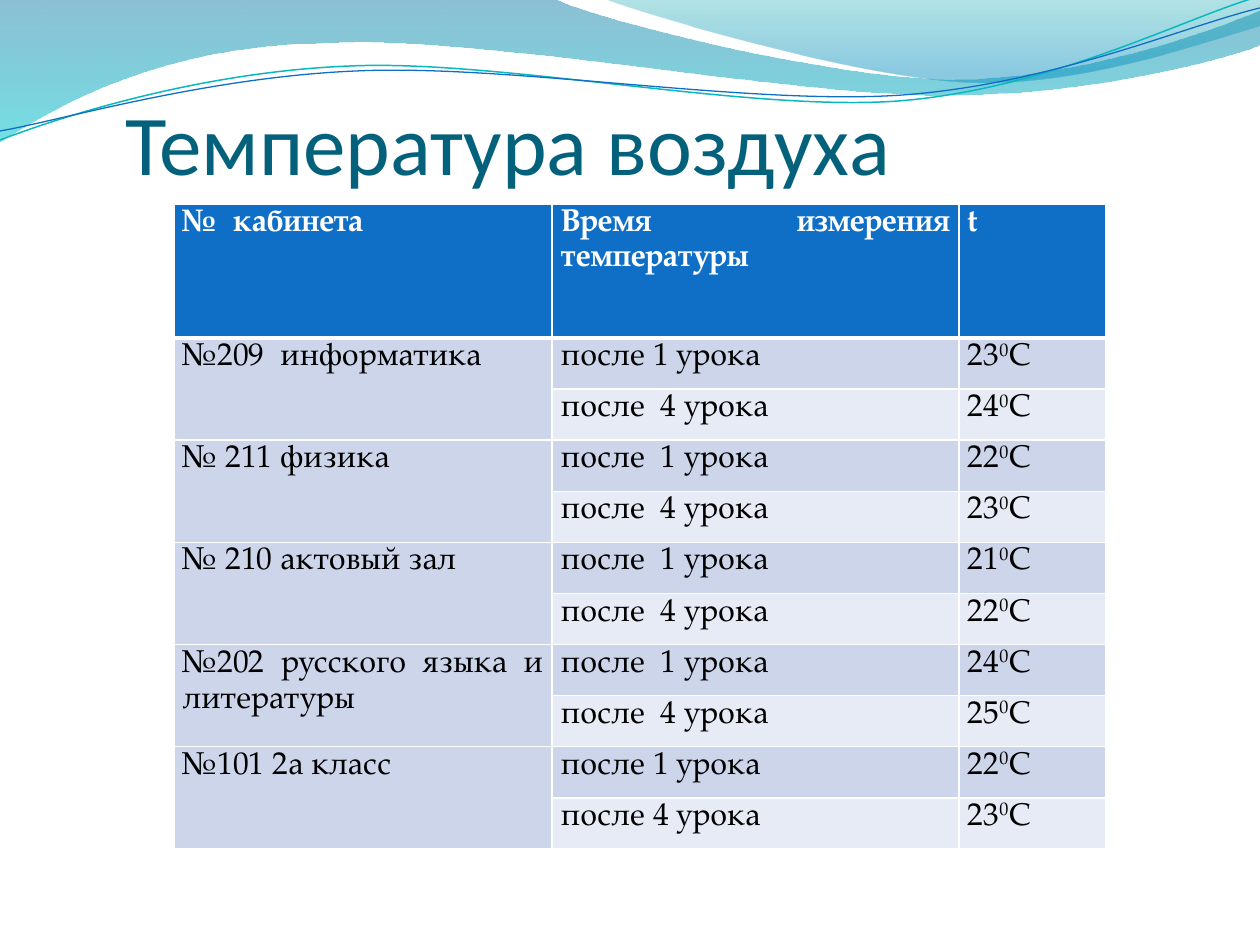
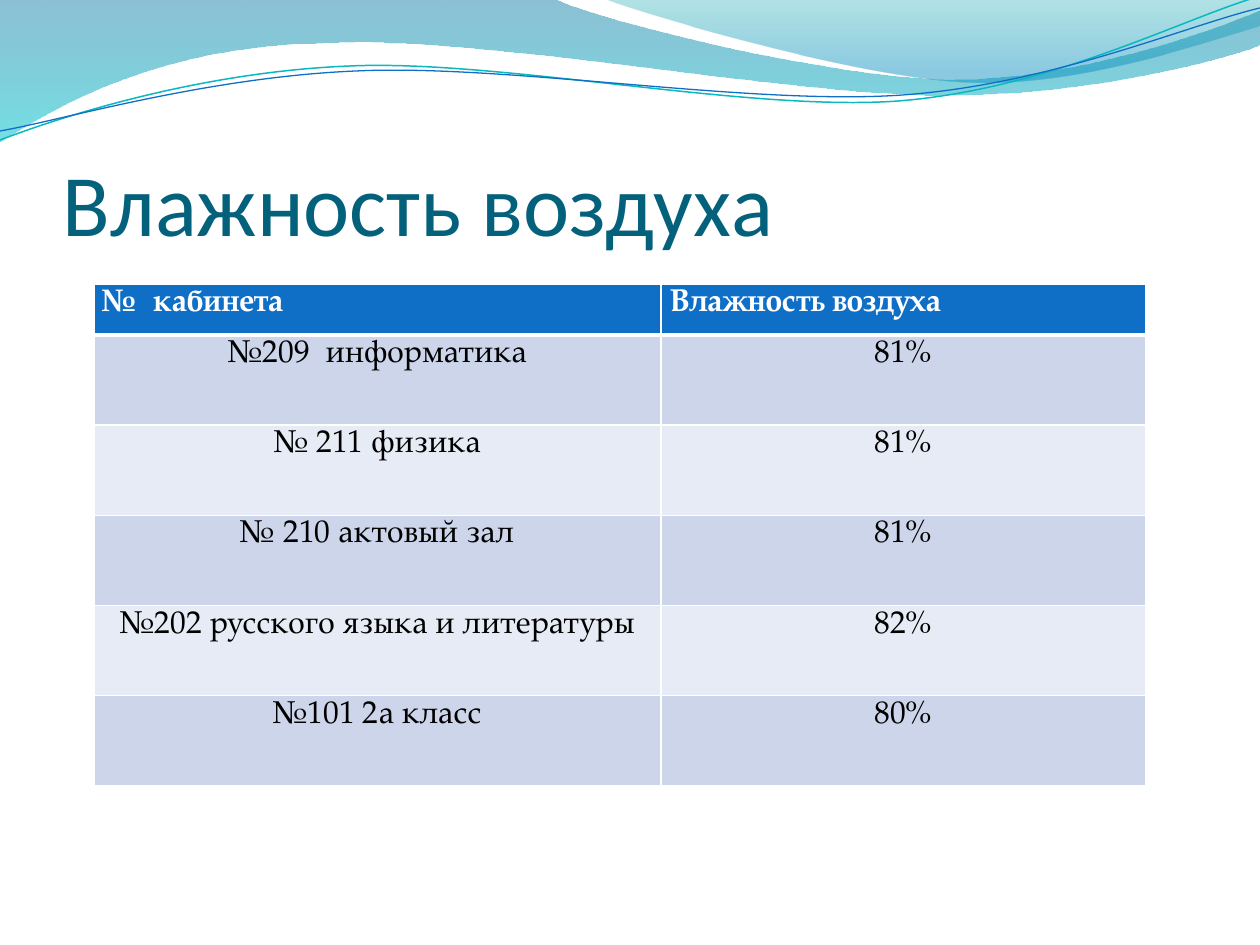
import pptx
import pptx.util
import pptx.dml.color
import pptx.enum.text
import pptx.oxml
import pptx.oxml.ns

PX = 914400 / 126
COLORS = {
    "title": "04617B", "header": "0F6FC6", "white": "FFFFFF", "text": "000000",
    "dark_row": "CCD5EA", "light_row": "E7EBF5",
    "teal_line": "0AB8BF", "blue_line": "0F6FC6",
    "wave_top": "0074A1", "wave_bottom": "00C6CF",
    "crest_top": "00A1A9", "crest_bottom": "008BBF",
}
TITLE_FONT = "Calibri"
TABLE_FONT = "TeX Gyre Pagella"
ALIGN = pptx.enum.text.PP_ALIGN

BANDS = [
    {"start": (0, 0),
     "segments": [(554, -1), (600, 21, 837, 79, 955, 79), (1075, 79, 1207, 33, 1260, 11),
                  (1261, 45), (1238, 55, 1096, 96, 940, 95), (782, 95, 481, 35, 324, 43),
                  (163, 45, 58, 105, -1, 142), (0, 0)],
     "stops": [(0, "wave_top", 45), (1, "wave_bottom", 55)]},
    {"start": (604, -1),
     "segments": [(641, 14, 859, 78, 969, 82), (1079, 87, 1211, 40, 1260, 26),
                  (1260, 0), (604, -1)],
     "stops": [(0, "crest_top", 30), (0.8, "crest_bottom", 45)]},
]
LINES = [
    {"start": (0, 140), "color": "teal_line", "width": 0.85,
     "segments": [(60, 117, 199, 72, 349, 66), (498, 59, 747, 112, 898, 101),
                  (1050, 89, 1182, 19, 1257, -3)]},
    {"start": (0, 131), "color": "blue_line", "width": 0.75,
     "segments": [(59, 121, 207, 77, 357, 71), (508, 64, 752, 106, 903, 95),
                  (1053, 84, 1185, 26, 1260, 8)]},
]

TEMPERATURES = [
    ("№209  информатика", [("после 1 урока", 23), ("после  4 урока", 24)]),
    ("№ 211 физика ", [("после  1 урока", 22), ("после  4 урока", 23)]),
    ("№ 210 актовый зал", [("после  1 урока", 21), ("после  4 урока", 22)]),
    ("№202 русского языка и литературы ", [("после  1 урока", 24), ("после  4 урока", 25)]),
    ("№101 2а класс", [("после 1 урока", 22), ("после 4 урока", 23)]),
]
HUMIDITY = [
    ("№209  информатика", "81%"),
    ("№ 211 физика", "81%"),
    ("№ 210 актовый зал", "81%"),
    ("№202 русского языка и литературы", "82%"),
    ("№101 2а класс", "80%"),
]
SLIDES = [
    {"title": "Температура воздуха", "title_box": (126, 155, 1134, 38), "title_size": 48.6,
     "header": ["№  кабинета", "Время измерения температуры", "t "],
     "rows": [(room if index == 0 else None, time, [str(degrees), ("0", 30), "С"])
              for room, readings in TEMPERATURES
              for index, (time, degrees) in enumerate(readings)],
     "origin": (174, 204), "columns": [378, 407, 147],
     "height": 645, "header_height": 134, "align": ALIGN.JUSTIFY},
    {"title": "Влажность воздуха", "title_box": (63, 97, 1134, 157), "title_size": 50,
     "header": ["№  кабинета", "Влажность воздуха"],
     "rows": HUMIDITY,
     "origin": (94, 284), "columns": [567, 485],
     "height": 502, "header_height": 51, "align": ALIGN.CENTER},
]


def px(value):
    return pptx.util.Emu(round(value * PX))


def rgb(name):
    return pptx.dml.color.RGBColor.from_string(COLORS[name])


def add_outline(slide, start, segments):
    points = [pair for segment in segments for pair in zip(segment[::2], segment[1::2])]
    builder = slide.shapes.build_freeform(*start, scale=PX)
    builder.add_line_segments(points, close=points[-1] == start)
    shape = builder.convert_to_shape()
    shape.shadow.inherit = False
    steps = iter(list(shape.element.iter(pptx.oxml.ns.qn("a:lnTo"))))
    for segment in segments:
        first = next(steps)
        if len(segment) == 2:
            continue
        first.tag = pptx.oxml.ns.qn("a:cubicBezTo")
        for extra in (next(steps), next(steps)):
            first.append(extra[0])
            extra.getparent().remove(extra)
    return shape


def add_waves(slide):
    for band in BANDS:
        shape = add_outline(slide, band["start"], band["segments"])
        shape.line.fill.background()
        shape.fill.gradient()
        shape.fill.gradient_angle = 270
        for stop, (position, color, opacity) in zip(shape.fill.gradient_stops, band["stops"]):
            stop.position = position
            stop.color.rgb = rgb(color)
        color_elements = shape.element.spPr.iter(pptx.oxml.ns.qn("a:srgbClr"))
        for element, (position, color, opacity) in zip(list(color_elements), band["stops"]):
            element.append(pptx.oxml.parse_xml(
                f'<a:alpha {pptx.oxml.ns.nsdecls("a")} val="{opacity * 1000}"/>'))
    for line in LINES:
        shape = add_outline(slide, line["start"], line["segments"])
        shape.fill.background()
        shape.line.color.rgb = rgb(line["color"])
        shape.line.width = pptx.util.Pt(line["width"])


def add_run(paragraph, text, font, size, color, bold=False, baseline=0):
    run = paragraph.add_run()
    run.text = text
    run.font.name = font
    run.font.size = pptx.util.Pt(size)
    run.font.bold = bold
    run.font.color.rgb = rgb(color)
    if baseline:
        run.font._element.set("baseline", str(baseline * 1000))


def add_title(slide, text, box, size):
    frame = slide.shapes.add_textbox(*map(px, box)).text_frame
    frame.word_wrap = True
    frame.vertical_anchor = pptx.enum.text.MSO_ANCHOR.BOTTOM
    frame.margin_left = frame.margin_right = frame.margin_bottom = 0
    frame.margin_top = px(6)
    add_run(frame.paragraphs[0], text, TITLE_FONT, size, "title")


def set_borders(cell, row):
    widths = {"L": 1, "R": 1, "T": 3 if row == 1 else 1, "B": 3 if row == 0 else 1}
    properties = cell._tc.get_or_add_tcPr()
    for side, width in widths.items():
        properties.append(pptx.oxml.parse_xml(
            f'<a:ln{side} {pptx.oxml.ns.nsdecls("a")} w="{width * 12700}"><a:solidFill>'
            f'<a:srgbClr val="{COLORS["white"]}"/></a:solidFill></a:ln{side}>'))


def fill_cell(cell, content, row, align):
    is_header = row == 0
    set_borders(cell, row)
    cell.fill.solid()
    cell.fill.fore_color.rgb = rgb(
        "header" if is_header else "dark_row" if row % 2 else "light_row")
    cell.margin_left = cell.margin_right = px(9)
    cell.margin_top = cell.margin_bottom = 0
    if content is None:
        return
    paragraph = cell.text_frame.paragraphs[0]
    paragraph.alignment = ALIGN.JUSTIFY if is_header else align
    paragraph.line_spacing = 1.15
    paragraph.space_after = pptx.util.Pt(10)
    for part in content if isinstance(content, list) else [content]:
        text, baseline = part if isinstance(part, tuple) else (part, 0)
        add_run(paragraph, text, TABLE_FONT, 18, "white" if is_header else "text",
                is_header, baseline)


def add_data_table(slide, data):
    rows = [data["header"], *data["rows"]]
    row_height = (data["height"] - data["header_height"]) / len(data["rows"])
    size = sum(data["columns"]), data["height"]
    table = slide.shapes.add_table(
        len(rows), len(data["columns"]), *map(px, data["origin"] + size)).table
    table.horz_banding = False
    for column, width in zip(table.columns, data["columns"]):
        column.width = px(width)
    for row_index, contents in enumerate(rows):
        table.rows[row_index].height = px(row_height if row_index else data["header_height"])
        for column_index, content in enumerate(contents):
            cell = table.cell(row_index, column_index)
            fill_cell(cell, content, row_index, data["align"])
            if content is None:
                table.cell(row_index - 1, column_index).merge(cell)


def main():
    presentation = pptx.Presentation()
    presentation.slide_width = px(1260)
    presentation.slide_height = px(945)
    for data in SLIDES:
        slide = presentation.slides.add_slide(presentation.slide_layouts[6])
        add_waves(slide)
        add_title(slide, data["title"], data["title_box"], data["title_size"])
        add_data_table(slide, data)
    presentation.save("out.pptx")


if __name__ == "__main__":
    main()
